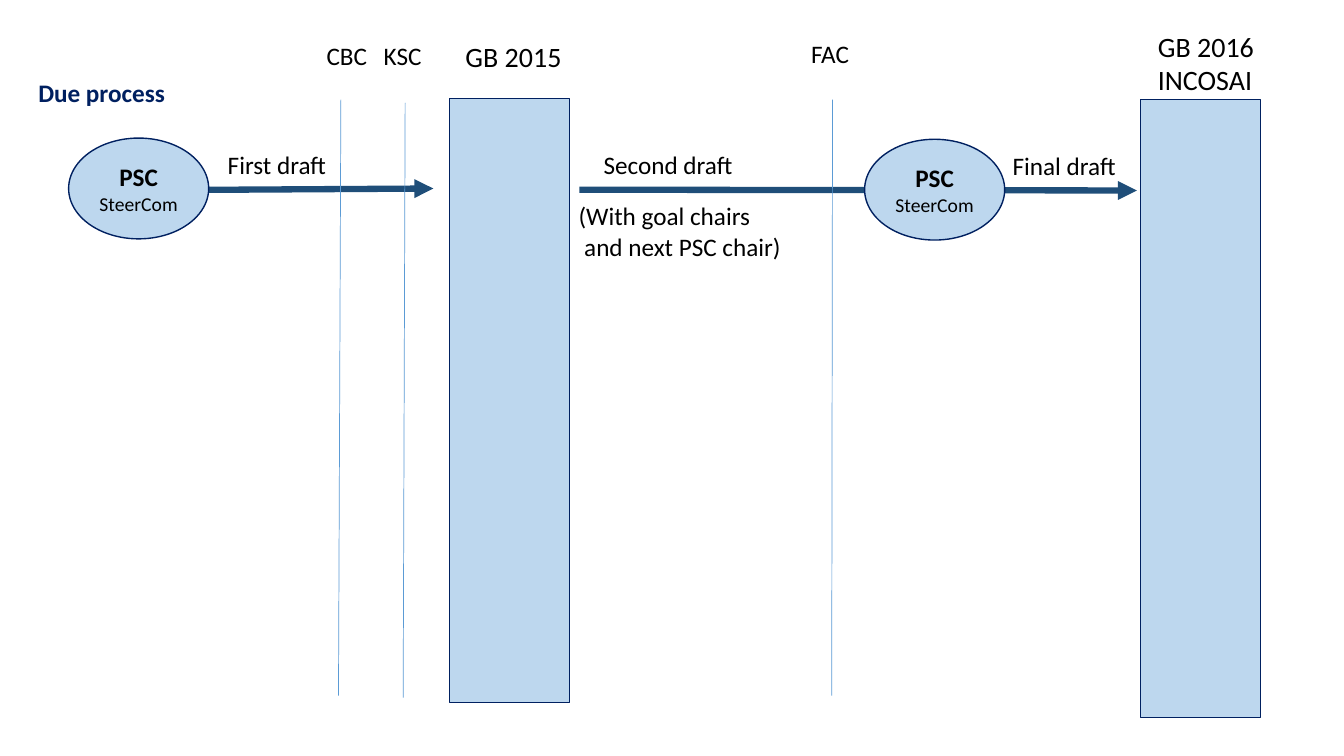
from dataclasses import dataclass

from lxml.etree import SubElement
from pptx import Presentation
from pptx.dml.color import RGBColor
from pptx.enum.shapes import MSO_CONNECTOR, MSO_SHAPE
from pptx.enum.text import MSO_ANCHOR, MSO_AUTO_SIZE, PP_ALIGN
from pptx.oxml.ns import qn
from pptx.util import Cm, Pt

FONT = "Calibri"
BLACK, NAVY, PALE = "000000", "002060", "BDD7EE"
ARROW, THIN = "1F4E79", "5B9BD5"


@dataclass
class Box:
    x: float
    y: float
    w: float
    h: float


@dataclass
class Line:
    x1: float
    y1: float
    x2: float
    y2: float


@dataclass
class Label:
    text: str
    box: Box
    size: int = 18
    wrap: bool = True


FLOWS = [Line(2.41, 4.8, 10.92, 4.75), Line(14.6, 4.78, 28.65, 4.8)]
MEETINGS = [Box(11.33, 2.49, 3.02, 15.21), Box(28.75, 2.51, 3.02, 15.57)]
STEERCOMS = [Box(1.73, 3.48, 3.53, 2.54), Box(21.79, 3.51, 3.53, 2.54)]
COMMITTEE_LINES = [
    Line(8.59, 2.51, 8.53, 17.53),
    Line(10.21, 2.59, 10.16, 17.58),
    Line(20.98, 2.51, 20.96, 17.53),
]
LABELS = [
    Label("GB 2015", Box(11.48, 0.86, 2.95, 1.12), 20, False),
    Label("GB 2016\nINCOSAI", Box(28.93, 0.61, 2.95, 1.96), 20, False),
    Label("First draft", Box(5.49, 3.63, 5, 1.02)),
    Label("Second draft", Box(14.96, 3.63, 5, 1.02)),
    Label("Final draft", Box(25.27, 3.66, 5, 1.02)),
    Label("CBC", Box(7.98, 0.89, 1.85, 1.02)),
    Label("KSC", Box(9.42, 0.89, 1.85, 1.02)),
    Label("FAC", Box(20.19, 0.84, 1.85, 1.02)),
    Label("(With goal chairs\n and next PSC chair)", Box(14.33, 4.93, 7.85, 1.8)),
]


def rgb(value: str) -> RGBColor:
    return RGBColor.from_string(value)


def place(box: Box) -> tuple:
    return Cm(box.x), Cm(box.y), Cm(box.w), Cm(box.h)


def style(font, size: int, color: str = BLACK, bold: bool = False) -> None:
    font.name, font.size, font.bold = FONT, Pt(size), bold
    font.color.rgb = rgb(color)


def add_line(s, line: Line, color: str, width: float, arrow: bool = False) -> None:
    c = s.shapes.add_connector(
        MSO_CONNECTOR.STRAIGHT, Cm(line.x1), Cm(line.y1), Cm(line.x2), Cm(line.y2)
    )
    c.line.color.rgb = rgb(color)
    c.line.width = Pt(width)
    if arrow:
        SubElement(c.line._get_or_add_ln(), qn("a:tailEnd"), type="triangle")
    SubElement(c._element.spPr, qn("a:effectLst"))


def add_filled(s, kind: MSO_SHAPE, box: Box):
    sp = s.shapes.add_shape(kind, *place(box))
    sp.shadow.inherit = False
    sp.fill.solid()
    sp.fill.fore_color.rgb = rgb(PALE)
    sp.line.color.rgb = rgb(NAVY)
    sp.line.width = Pt(1)
    return sp


def add_steercom(s, box: Box) -> None:
    tf = add_filled(s, MSO_SHAPE.OVAL, box).text_frame
    tf.word_wrap = True
    tf.vertical_anchor = MSO_ANCHOR.MIDDLE
    p = tf.paragraphs[0]
    p.alignment = PP_ALIGN.CENTER
    for text, size, bold in (("PSC ", 18, True), ("SteerCom", 14, False)):
        r = p.add_run()
        r.text = text
        style(r.font, size, bold=bold)


def add_label(s, label: Label) -> None:
    tf = s.shapes.add_textbox(*place(label.box)).text_frame
    tf.word_wrap = label.wrap
    tf.auto_size = MSO_AUTO_SIZE.SHAPE_TO_FIT_TEXT
    tf.text = label.text
    for p in tf.paragraphs:
        style(p.font, label.size)


def set_title(s, text: str, box: Box) -> None:
    title = s.shapes.title
    title.left, title.top, title.width, title.height = place(box)
    tf = title.text_frame
    tf.text = text
    tf.word_wrap = True
    tf.auto_size = MSO_AUTO_SIZE.SHAPE_TO_FIT_TEXT
    tf.vertical_anchor = MSO_ANCHOR.TOP
    p = tf.paragraphs[0]
    p.alignment = PP_ALIGN.LEFT
    style(p.font, 18, NAVY, True)


def main() -> None:
    prs = Presentation()
    prs.slide_width, prs.slide_height = Cm(33.87), Cm(19.05)
    s = prs.slides.add_slide(prs.slide_layouts[5])
    set_title(s, "Due process", Box(0.71, 1.83, 5.54, 1.02))

    # Draft flow, behind the meetings and committees
    for flow in FLOWS:
        add_line(s, flow, ARROW, 4.5, arrow=True)

    # Governing board meetings and steering committees
    for meeting in MEETINGS:
        add_filled(s, MSO_SHAPE.RECTANGLE, meeting)
    for steercom in STEERCOMS:
        add_steercom(s, steercom)

    # Committee dates and all labels
    for line in COMMITTEE_LINES:
        add_line(s, line, THIN, 0.5)
    for label in LABELS:
        add_label(s, label)

    prs.save("out.pptx")


if __name__ == "__main__":
    main()
